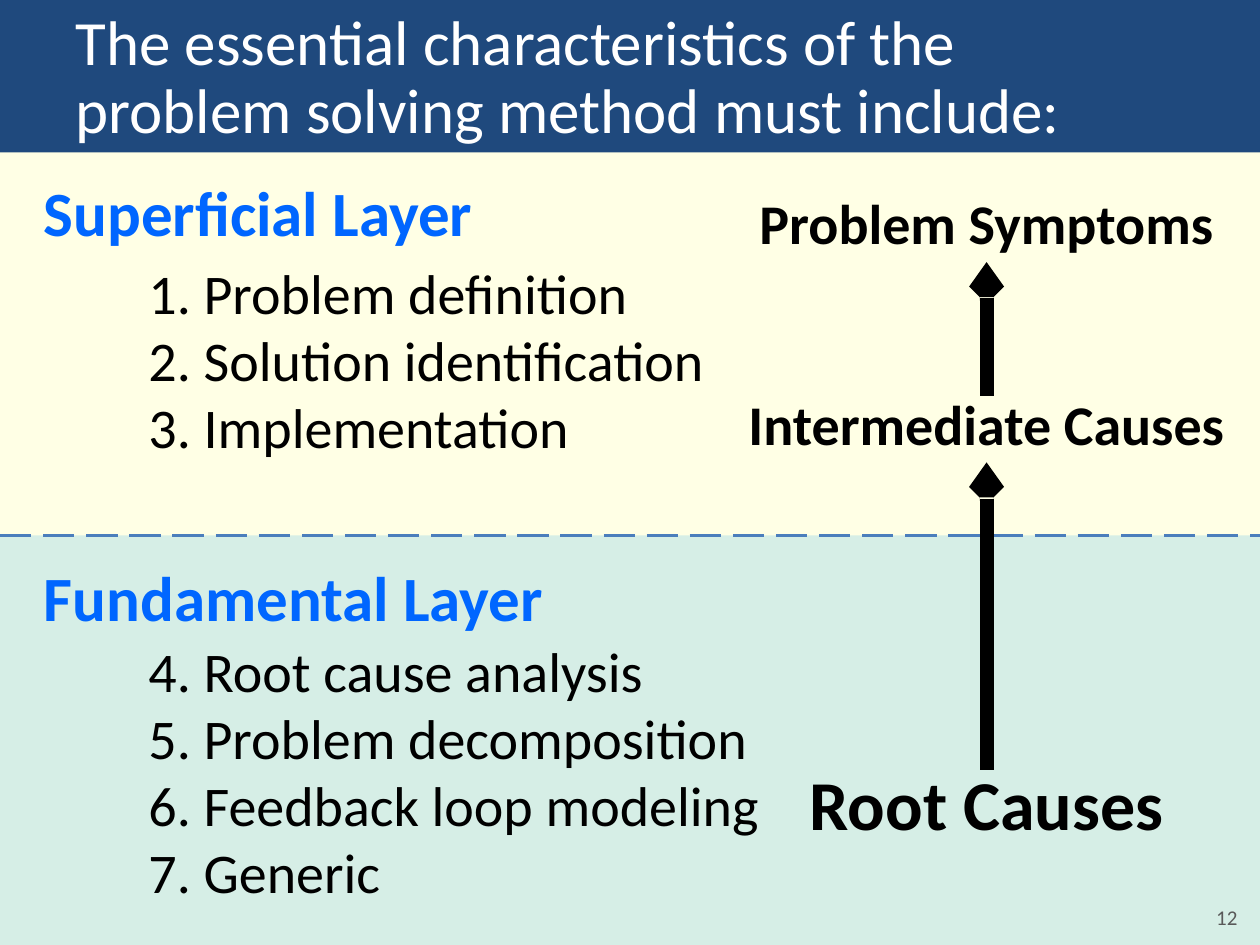
import pptx
import pptx.util
import pptx.dml.color
import pptx.enum.dml
import pptx.enum.shapes
import pptx.enum.text
import pptx.oxml
import pptx.oxml.ns

Inches, Pt = pptx.util.Inches, pptx.util.Pt
RGBColor = pptx.dml.color.RGBColor
ALIGN = pptx.enum.text.PP_ALIGN
ANCHOR = pptx.enum.text.MSO_ANCHOR
AUTO_SIZE = pptx.enum.text.MSO_AUTO_SIZE

FONT = "Calibri"
NAVY = RGBColor(0x1F, 0x49, 0x7D)
WHITE = RGBColor(0xFF, 0xFF, 0xFF)
BLACK = RGBColor(0, 0, 0)
CREAM = RGBColor(0xFF, 0xFF, 0xE5)
MINT = RGBColor(0xD6, 0xEE, 0xE6)
BLUE = RGBColor(0x00, 0x66, 0xFF)
DIVIDER_BLUE = RGBColor(0x4B, 0x7E, 0xBC)
GRAY = RGBColor(0x59, 0x59, 0x59)

TITLE = "The essential characteristics of the \vproblem solving method must include:"
BANDS = [(3.83, 3.67, MINT), (1.21, 3.04, CREAM)]
LAYERS = [
    ("Superficial Layer", (0.25, 1.33, 3.64, 0.71), (1.08, 2, 4.79, 1.72),
     ["Problem definition", "Solution identification", "Implementation"]),
    ("Fundamental Layer", (0.25, 4.38, 4.21, 0.71), (1.08, 5, 5.21, 2.26),
     ["Root cause analysis", "Problem decomposition",
      "Feedback loop modeling", "Generic"]),
]
CAUSE_CHAIN = [
    ("Problem Symptoms", 32, 1.55, 3.96, 0.53),
    ("Intermediate Causes", 32, 3.14, 4.17, 0.53),
    ("Root Causes", 40, 6.11, 3.42, 0.64),
]
CHAIN_CENTER = 7.83
DIVIDER_TOP = 4.25
PAGE_NUMBER = "12"


def add_text(slide, place, lines, size, color, bold=False, align=ALIGN.LEFT,
             anchor=ANCHOR.TOP, spacing=None, wrap=True, grow=True):
    frame = slide.shapes.add_textbox(*map(Inches, place)).text_frame
    frame.word_wrap = wrap
    frame.auto_size = AUTO_SIZE.SHAPE_TO_FIT_TEXT if grow else AUTO_SIZE.NONE
    frame.vertical_anchor = anchor
    frame.text = "\n".join(lines)
    for paragraph in frame.paragraphs:
        paragraph.alignment = align
        paragraph.line_spacing = spacing
        paragraph.font.name = FONT
        paragraph.font.size = Pt(size)
        paragraph.font.bold = bold
        paragraph.font.color.rgb = color


def add_line(slide, start, end, color, width):
    line = slide.shapes.add_connector(
        pptx.enum.shapes.MSO_CONNECTOR.STRAIGHT,
        *map(Inches, (*start, *end)))
    line.line.color.rgb = color
    line.line.width = Pt(width)
    properties = line._element.spPr
    properties.append(pptx.oxml.parse_xml(
        f"<a:effectLst {pptx.oxml.ns.nsdecls('a')}/>"))
    return line


def add_arrow(slide, start, end):
    arrow = add_line(slide, start, end, BLACK, 8)
    arrow.line._get_or_add_ln().append(pptx.oxml.parse_xml(
        f"<a:tailEnd {pptx.oxml.ns.nsdecls('a')} type='arrow' w='sm' len='sm'/>"))


def add_title(slide):
    title = slide.shapes.title
    title.left, title.top, title.width, title.height = map(Inches, (0, 0, 10, 1.25))
    title.fill.solid()
    title.fill.fore_color.rgb = NAVY
    frame = title.text_frame
    frame.margin_top = frame.margin_bottom = 0
    frame.vertical_anchor = ANCHOR.MIDDLE
    frame.auto_size = AUTO_SIZE.NONE
    heading = frame.paragraphs[0]
    heading.text = TITLE
    heading.alignment = ALIGN.LEFT
    heading.line_spacing = 0.9
    indent = heading._p.get_or_add_pPr()
    indent.set("marL", str(Inches(0.5)))
    indent.set("indent", "0")
    heading.font.name = FONT
    heading.font.size = Pt(36)
    heading.font.color.rgb = WHITE


def main():
    deck = pptx.Presentation()
    deck.slide_width, deck.slide_height = Inches(10), Inches(7.5)
    slide = deck.slides.add_slide(deck.slide_layouts[5])
    add_title(slide)

    for top, height, color in BANDS:
        band = slide.shapes.add_shape(pptx.enum.shapes.MSO_SHAPE.RECTANGLE,
                                      *map(Inches, (0, top, 10, height)))
        band.shadow.inherit = False
        band.fill.solid()
        band.fill.fore_color.rgb = color
        band.line.fill.background()

    divider = add_line(slide, (0, DIVIDER_TOP), (10, DIVIDER_TOP), DIVIDER_BLUE, 2.25)
    divider.line.dash_style = pptx.enum.dml.MSO_LINE.LONG_DASH

    number = 1
    for name, name_place, steps_place, steps in LAYERS:
        add_text(slide, name_place, [name], 36, BLUE, bold=True, wrap=False)
        numbered = [f"{n}. {step}" for n, step in enumerate(steps, number)]
        add_text(slide, steps_place, numbered, 32, BLACK)
        number += len(steps)

    for name, size, top, width, height in CAUSE_CHAIN:
        add_text(slide, (CHAIN_CENTER - width / 2, top, width, height), [name], size,
                 BLACK, bold=True, align=ALIGN.CENTER, anchor=ANCHOR.MIDDLE, spacing=0.8)

    for effect, cause in zip(CAUSE_CHAIN, CAUSE_CHAIN[1:]):
        effect_bottom = effect[2] + effect[4]
        add_arrow(slide, (CHAIN_CENTER, cause[2]), (CHAIN_CENTER, effect_bottom))

    add_text(slide, (9.42, 7.13, 0.5, 0.33), [PAGE_NUMBER], 12, GRAY,
             align=ALIGN.RIGHT, grow=False)
    deck.save("out.pptx")


if __name__ == "__main__":
    main()
